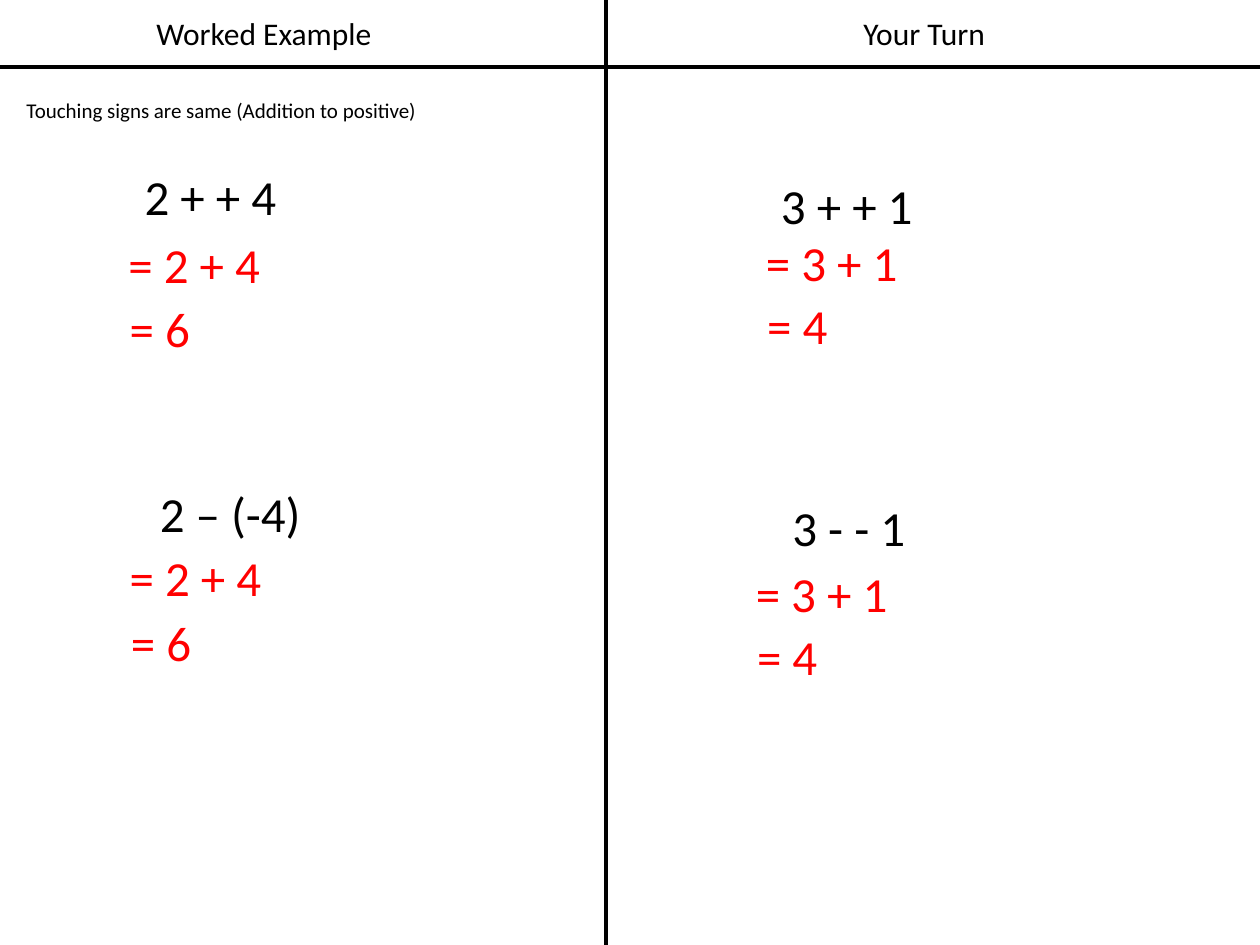
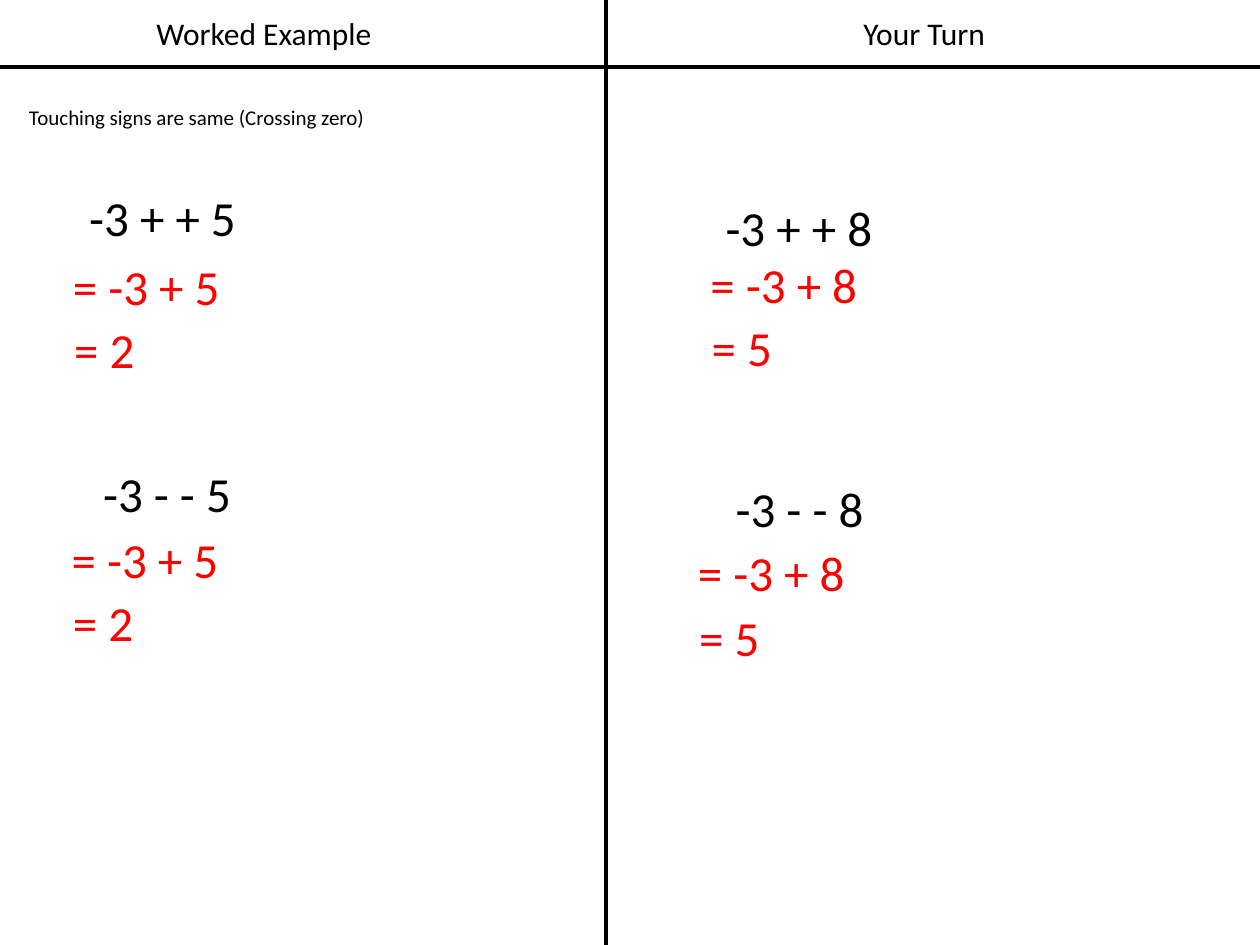
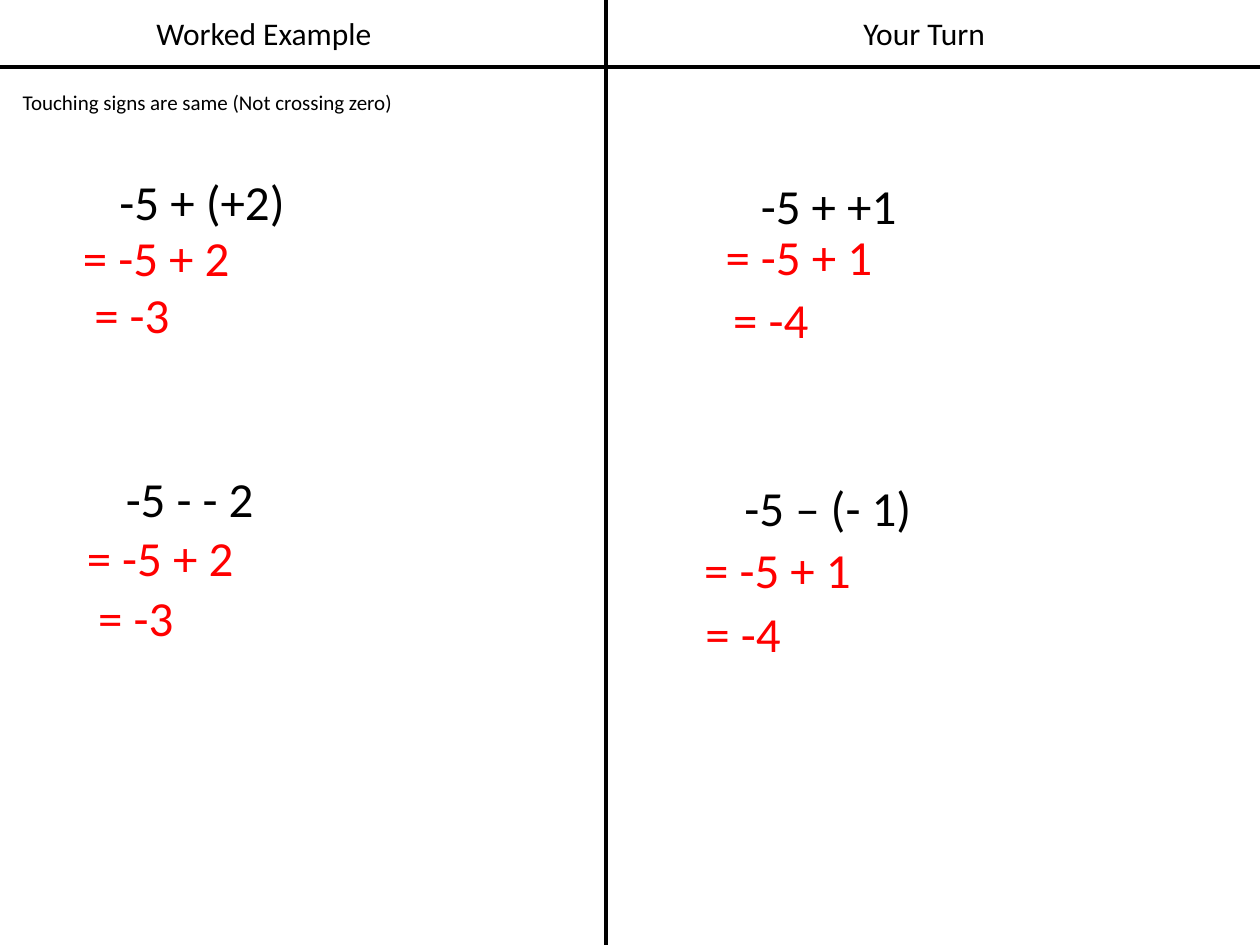
from pptx import Presentation, util as u
from pptx.dml import color
from pptx.enum import shapes, text
from pptx.oxml import ns
from lxml import etree

INK, RED = "000000", "FF0000"


def paint(code):
    return color.RGBColor.from_string(code)


class Deck:
    font = "Calibri"
    wide, high = 10, 7.5
    split, band = 4.81, 0.53

    def __init__(self):
        self.prs = Presentation()
        self.prs.slide_width = u.Inches(self.wide)
        self.prs.slide_height = u.Inches(self.high)
        self.slide = None

    def page(self, topic, spot):
        self.slide = self.prs.slides.add_slide(self.prs.slide_layouts[5])
        self.title(topic, spot)
        self.head("Worked Example", 1.13)
        self.head("Your Turn", 6.37)
        self.rule(self.split, 0, self.split, self.high)
        self.rule(0, self.band, self.wide, self.band)

    def label(self, shape, words, size, hue=INK, align=text.PP_ALIGN.LEFT,
              wrap=True):
        frame = shape.text_frame
        frame.word_wrap = wrap
        frame.auto_size = text.MSO_AUTO_SIZE.SHAPE_TO_FIT_TEXT
        frame.vertical_anchor = text.MSO_ANCHOR.TOP
        para = frame.paragraphs[0]
        para.alignment = align
        run = para.add_run()
        run.text = words
        run.font.name = self.font
        run.font.size = u.Pt(size)
        run.font.color.rgb = paint(hue)

    def box(self, x, y, w, h):
        return self.slide.shapes.add_textbox(
            u.Inches(x), u.Inches(y), u.Inches(w), u.Inches(h))

    def title(self, words, spot):
        x, y, w = spot
        shape = self.slide.shapes.title
        shape.left, shape.top = u.Inches(x), u.Inches(y)
        shape.width, shape.height = u.Inches(w), u.Inches(0.3)
        self.label(shape, words, 12)

    def head(self, words, x):
        self.label(self.box(x, 0.06, 1.93, 0.4), words, 18,
                   align=text.PP_ALIGN.CENTER)

    def rule(self, x1, y1, x2, y2):
        line = self.slide.shapes.add_connector(
            shapes.MSO_CONNECTOR.STRAIGHT,
            u.Inches(x1), u.Inches(y1), u.Inches(x2), u.Inches(y2))
        line.line.color.rgb = paint(INK)
        line.line.width = u.Pt(2.5)
        props = line._element.find(ns.qn("p:spPr"))
        etree.SubElement(props, ns.qn("a:effectLst"))

    def sum(self, words, x, y, w):
        self.label(self.box(x, y, w, 0.57), words, 28, wrap=False)

    def step(self, words, x, y):
        self.label(self.box(x, y, 1.52, 0.57), words, 28, RED)


PAGES = [
    ("Touching signs are same (Addition to positive)", (0.11, 0.72, 3.32), [
        [("2 + + 4", 1.05, 1.27, 1.26),
         ("= 2 + 4", 0.92, 1.81), ("= 6", 0.93, 2.32)],
        [("3 + + 1", 6.1, 1.34, 1.26),
         ("= 3 + 1", 5.98, 1.8), ("= 4", 5.99, 2.3)],
        [("2 – (-4)", 1.17, 3.79, 1.34),
         ("= 2 + 4", 0.93, 4.3), ("= 6", 0.94, 4.81)],
        [("3 - - 1", 6.19, 3.9, 1.11),
         ("= 3 + 1", 5.9, 4.42), ("= 4", 5.91, 4.92)],
    ]),
    ("Touching signs are same (Crossing zero)", (0.13, 0.78, 4.49), [
        [("-3 + + 5", 0.61, 1.44, 1.38),
         ("= -3 + 5", 0.48, 1.99), ("= 2", 0.49, 2.49)],
        [("-3 + + 8", 5.66, 1.52, 1.38),
         ("= -3 + 8", 5.54, 1.97), ("= 5", 5.55, 2.47)],
        [("-3 - - 5", 0.72, 3.63, 1.23),
         ("= -3 + 5", 0.47, 4.15), ("= 2", 0.48, 4.65)],
        [("-3 - - 8", 5.74, 3.75, 1.23),
         ("= -3 + 8", 5.44, 4.26), ("= 5", 5.45, 4.77)],
    ]),
    ("Touching signs are same (Not crossing zero)", (0.08, 0.66, 3.17), [
        [("-5 + (+2)", 0.85, 1.31, 1.53),
         ("= -5 + 2", 0.56, 1.76), ("= -3", 0.65, 2.21)],
        [("-5 + +1", 5.94, 1.34, 1.29),
         ("= -5 + 1", 5.66, 1.75), ("= -4", 5.72, 2.25)],
        [("-5 - - 2", 0.9, 3.67, 1.23),
         ("= -5 + 2", 0.59, 4.14), ("= -3", 0.68, 4.61)],
        [("-5 – (- 1)", 5.81, 3.74, 1.55),
         ("= -5 + 1", 5.49, 4.23), ("= -4", 5.5, 4.74)],
    ]),
]


def main():
    deck = Deck()
    for topic, spot, tasks in PAGES:
        deck.page(topic, spot)
        for task, *steps in tasks:
            deck.sum(*task)
            for step in steps:
                deck.step(*step)
    deck.prs.save("out.pptx")


if __name__ == "__main__":
    main()
